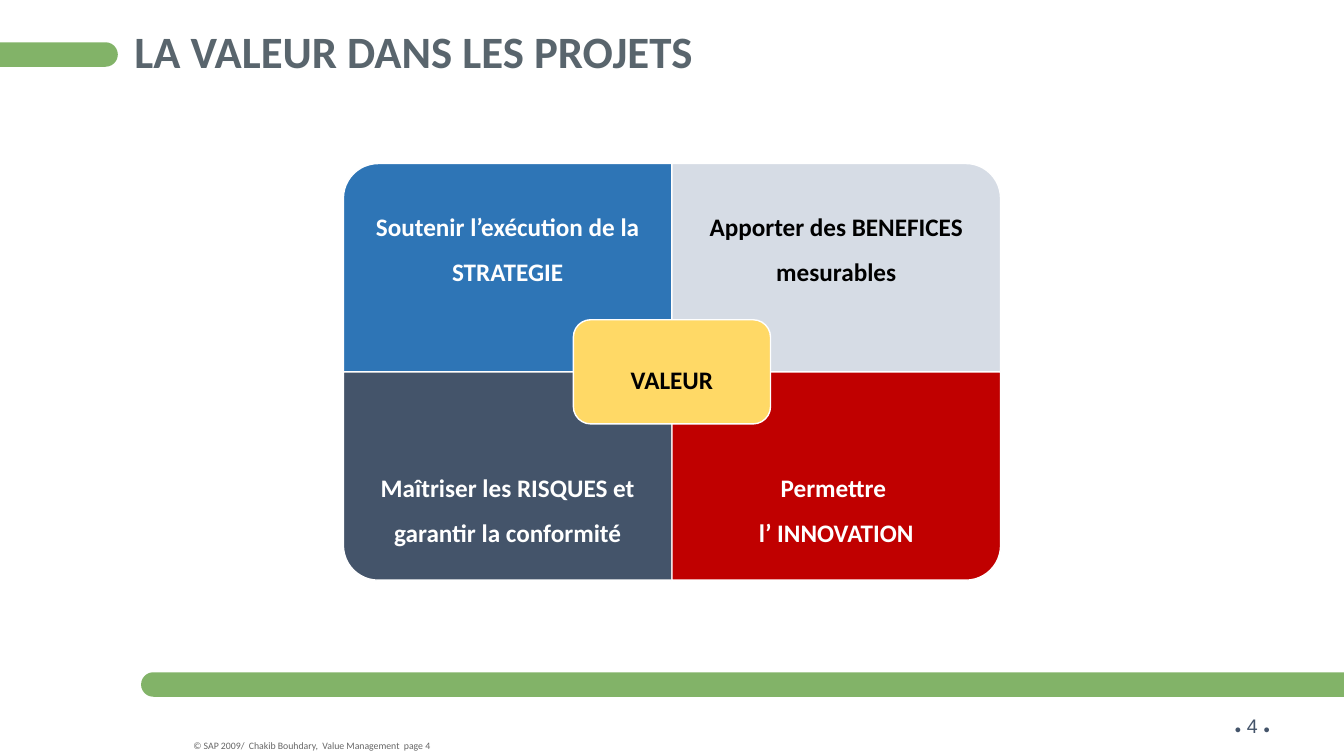
"""Build the slide on value in projects."""
import dataclasses

import lxml.etree
import pptx
import pptx.dml.color
import pptx.enum.shapes
import pptx.enum.text
import pptx.oxml.ns
import pptx.util

Pt = pptx.util.Pt
SHAPES = pptx.enum.shapes.MSO_SHAPE
ALIGN = pptx.enum.text.PP_ALIGN
ANCHOR = pptx.enum.text.MSO_ANCHOR


@dataclasses.dataclass(frozen=True)
class Theme:
    font: str = "Calibri"
    number_font: str = "Arial"
    white: str = "FFFFFF"
    black: str = "000000"
    green: str = "63A143"
    title: str = "59656D"
    copyright: str = "666666"
    blue: str = "2E75B6"
    pale: str = "D6DCE5"
    slate: str = "44546A"
    red: str = "C00000"
    yellow: str = "FFD966"
    title_size: float = 32
    label_size: float = 18
    number_size: float = 14
    dot_size: float = 8
    copyright_size: float = 7


def rgb(value):
    return pptx.dml.color.RGBColor.from_string(value)


def write(frame, runs, color, font, bold=False, align=ALIGN.LEFT, anchor=ANCHOR.TOP,
          inset=0, inset_y=None, spacing=None, after=None, wrap=True):
    frame.word_wrap = wrap
    frame.auto_size = pptx.enum.text.MSO_AUTO_SIZE.NONE
    frame.vertical_anchor = anchor
    frame.margin_left = frame.margin_right = Pt(inset)
    frame.margin_top = frame.margin_bottom = Pt(inset if inset_y is None else inset_y)
    paragraph = frame.paragraphs[0]
    paragraph.alignment = align
    if spacing is not None:
        paragraph.line_spacing = spacing
    if after is not None:
        paragraph.space_after = Pt(after)
    for index, (text, size) in enumerate(runs):
        for part, line in enumerate(text.split("\n")):
            if part:
                paragraph.add_line_break()
            run = paragraph.add_run()
            run.text = line
            run.font.size = Pt(size)
            run.font.name = font
            run.font.bold = bold
            run.font.color.rgb = rgb(color)


class SlideBuilder:
    def __init__(self, presentation, theme):
        self.theme = theme
        self.slide = presentation.slides.add_slide(presentation.slide_layouts[5])

    def title(self, text, left, top, width, height):
        shape = self.slide.shapes.title
        shape.left, shape.top, shape.width, shape.height = map(Pt, (left, top, width, height))
        write(shape.text_frame, [(text, self.theme.title_size)], self.theme.title,
              self.theme.font, bold=True, spacing=0.9)

    def text(self, runs, left, top, width, height, color, font, **style):
        box = self.slide.shapes.add_textbox(*map(Pt, (left, top, width, height)))
        write(box.text_frame, runs, color, font, **style)

    def label(self, text, left, top, width, height, color, inset):
        self.text([(text, self.theme.label_size)], left, top, width, height, color,
                  self.theme.font, bold=True, align=ALIGN.CENTER, anchor=ANCHOR.MIDDLE,
                  inset=inset, spacing=1.5, after=6.3)

    def shape(self, kind, left, top, width, height, fill, outlined=True):
        shape = self.slide.shapes.add_shape(kind, *map(Pt, (left, top, width, height)))
        shape.shadow.inherit = False
        shape.fill.solid()
        shape.fill.fore_color.rgb = rgb(fill)
        if outlined:
            shape.line.color.rgb = rgb(self.theme.white)
            shape.line.width = Pt(1)
        else:
            shape.line.fill.background()
        return shape

    def bar(self, left, top, width, height):
        bar = self.shape(SHAPES.ROUNDED_RECTANGLE, left, top, width, height,
                         self.theme.green, outlined=False)
        bar.adjustments[0] = 0.5
        color = next(bar.fill._xPr.iter(pptx.oxml.ns.qn("a:srgbClr")))
        lxml.etree.SubElement(color, pptx.oxml.ns.qn("a:alpha"), val="80000")

    def quadrant(self, left, top, width, height, fill, rotation):
        sideways = rotation % 180 != 0
        box_width, box_height = (height, width) if sideways else (width, height)
        shape = self.shape(SHAPES.ROUND_1_RECTANGLE, left + (width - box_width) / 2,
                           top + (height - box_height) / 2, box_width, box_height, fill)
        shape.rotation = rotation


def main():
    theme = Theme()
    presentation = pptx.Presentation()
    presentation.slide_width, presentation.slide_height = Pt(960), Pt(540)
    builder = SlideBuilder(presentation, theme)

    builder.text([("●", theme.dot_size), (" 4 ", theme.number_size), ("●", theme.dot_size)],
                 874.8, 506.2, 84, 24.5, theme.slate, theme.number_font,
                 inset=7.2, inset_y=3.6)
    builder.bar(100.8, 480.2, 873.4, 17.5)
    builder.bar(-9.4, 30.2, 93.6, 17.5)
    builder.title("LA VALEUR DANS LES PROJETS", 96, 21.6, 864, 46.8)
    builder.text([("© SAP 2009/  Chakib Bouhdary,  Value Management  page 4",
                   theme.copyright_size)],
                 138.2, 528.5, 172.8, 8.6, theme.copyright, theme.font, wrap=False)

    center_x, center_y = 480, 265.6
    width, height, label_height = 234.7, 148.8, 111.6
    quadrants = [
        (0, 0, 270, theme.blue, theme.white, "Soutenir l’exécution de la STRATEGIE"),
        (1, 0, 0, theme.pale, theme.black, "Apporter des BENEFICES mesurables"),
        (0, 1, 180, theme.slate, theme.white,
         "Maîtriser les RISQUES et garantir la conformité"),
        (1, 1, 90, theme.red, theme.white, "Permettre \nl’ INNOVATION"),
    ]
    for column, row, rotation, fill, color, text in quadrants:
        left = center_x + (column - 1) * width
        top = center_y + (row - 1) * height
        builder.quadrant(left, top, width, height, fill, rotation)
        builder.label(text, left, top + row * (height - label_height), width, label_height,
                      color, inset=10)

    core_width, core_height = 0.6 * width, height / 2
    core = (center_x - core_width / 2, center_y - core_height / 2, core_width, core_height)
    builder.shape(SHAPES.ROUNDED_RECTANGLE, *core, theme.yellow)
    builder.label("VALEUR", *core, theme.black, inset=5)

    presentation.save("out.pptx")


if __name__ == "__main__":
    main()
